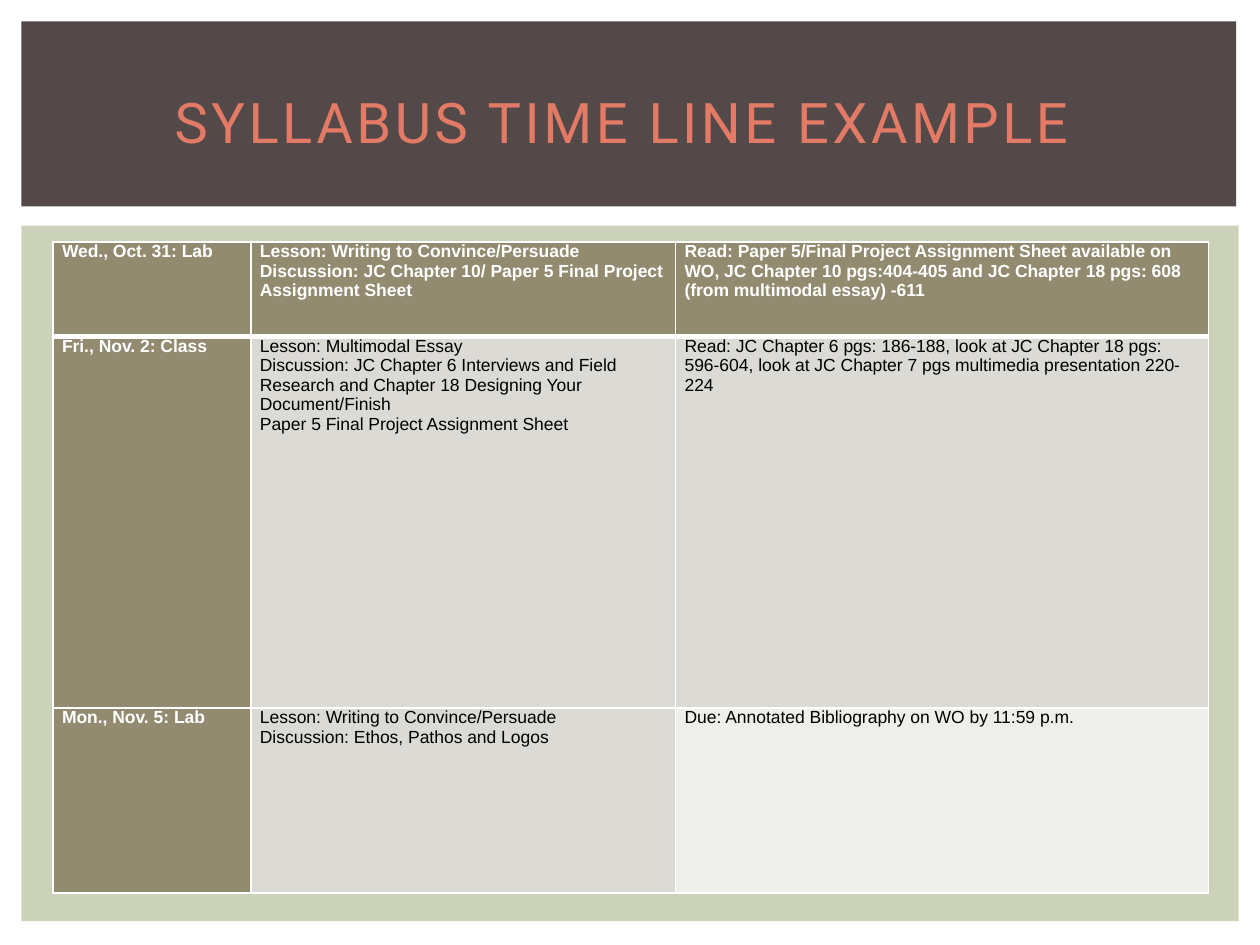
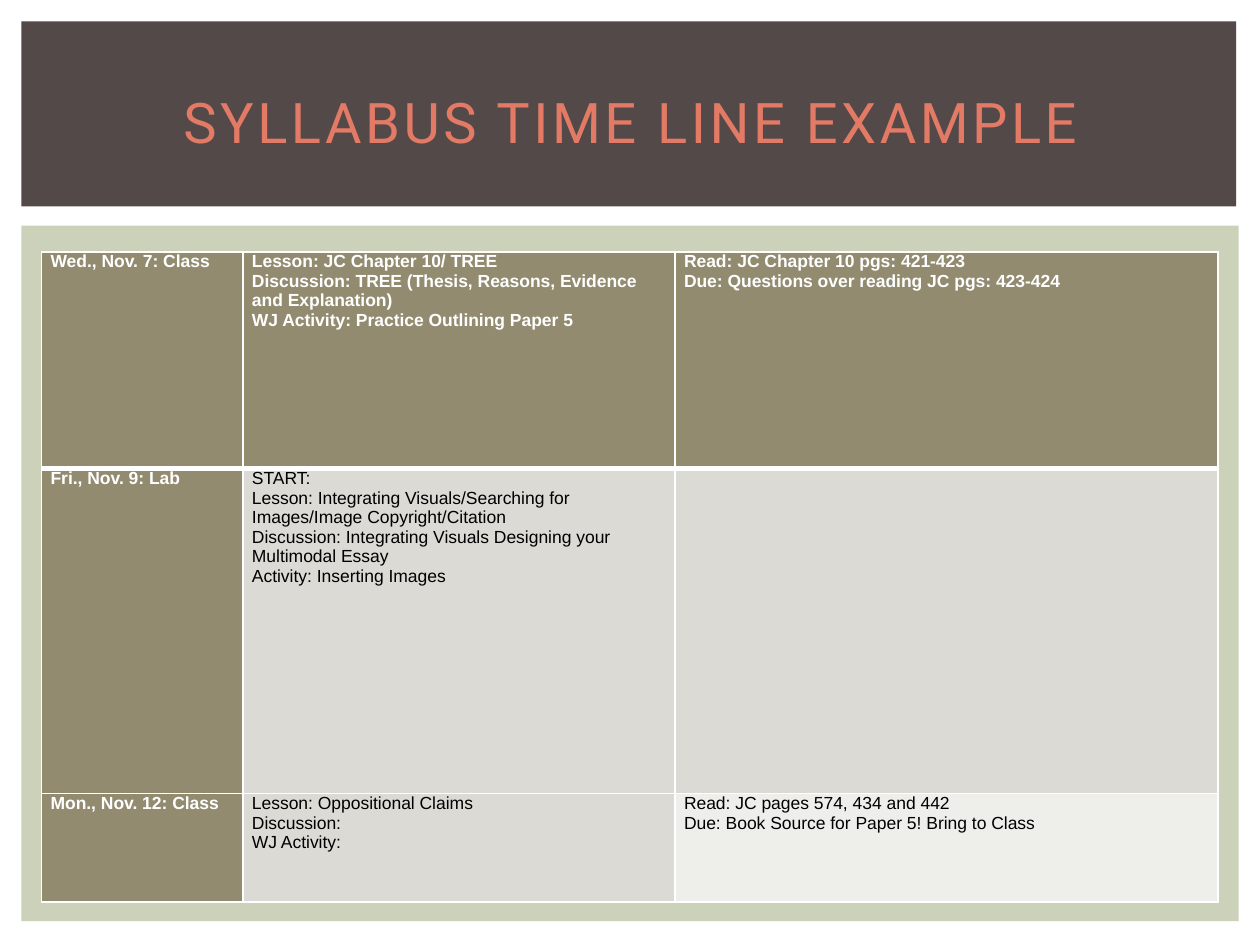
from dataclasses import dataclass

from lxml.etree import SubElement
from pptx import Presentation
from pptx.dml.color import RGBColor
from pptx.enum.shapes import MSO_SHAPE
from pptx.enum.text import MSO_ANCHOR, PP_ALIGN
from pptx.oxml.ns import qn
from pptx.util import Cm, Pt


@dataclass(frozen=True)
class Theme:
    band: str = "534949"
    panel: str = "CCD1B9"
    title: str = "E37A65"
    header: str = "928B70"
    body: str = "DCDAD5"
    light: str = "EEEEEB"
    white: str = "FFFFFF"
    black: str = "000000"
    title_font: str = "Roboto"
    table_font: str = "Arial"
    title_size: int = 32
    table_size: int = 10
    title_spacing: int = 2
    rule: int = 1
    header_rule: int = 3


THEME = Theme()
BAND_BOX = (0.43, 0.43, 24.49, 3.73)
PANEL_BOX = (0.43, 4.55, 24.54, 14.02)

SLIDES = [
    {
        "title": "SYLLABUS TIME LINE EXAMPLE ",
        "origin": (1.07, 4.88),
        "cols": (3.99, 8.56, 10.74),
        "heights": (1.9, 7.49, 3.73),
        "rows": [
            (["Wed., Oct. 31: Lab"],
             ["Lesson: Writing to Convince/Persuade",
              "Discussion: JC Chapter 10/ Paper 5 Final Project Assignment Sheet"],
             ["Read: Paper 5/Final Project Assignment Sheet available on WO, "
              "JC Chapter 10 pgs:404-405 and JC Chapter 18 pgs: 608 "
              "(from multimodal essay) -611"]),
            (["Fri., Nov. 2: Class"],
             ["Lesson: Multimodal Essay",
              "Discussion: JC Chapter 6 Interviews and Field Research and "
              "Chapter 18 Designing Your Document/Finish",
              "Paper 5 Final Project Assignment Sheet"],
             ["Read: JC Chapter 6 pgs: 186-188, look at JC Chapter 18 pgs: 596-604, "
              "look at JC Chapter 7 pgs multimedia presentation 220-224"]),
            (["Mon., Nov. 5: Lab"],
             ["Lesson: Writing to Convince/Persuade",
              "Discussion: Ethos, Pathos and Logos"],
             ["Due: Annotated Bibliography on WO by 11:59 p.m."]),
        ],
    },
    {
        "title": "SYLLABUS TIME LINE EXAMPLE",
        "origin": (0.84, 5.08),
        "cols": (4.06, 8.71, 10.95),
        "heights": (4.37, 6.55, 2.18),
        "rows": [
            (["Wed., Nov. 7: Class"],
             ["Lesson: JC Chapter 10/ TREE",
              "Discussion: TREE (Thesis, Reasons, Evidence and Explanation)",
              "WJ Activity: Practice Outlining Paper 5"],
             ["Read: JC Chapter 10 pgs: 421-423",
              "Due: Questions over reading JC pgs: 423-424"]),
            (["Fri., Nov. 9: Lab"],
             ["START:",
              "Lesson: Integrating Visuals/Searching for Images/Image Copyright/Citation",
              "Discussion: Integrating Visuals Designing your Multimodal Essay",
              "Activity: Inserting Images"],
             []),
            (["Mon., Nov. 12: Class"],
             ["Lesson: Oppositional Claims", "Discussion:", "WJ Activity:"],
             ["Read: JC pages 574, 434 and 442",
              "Due: Book Source for Paper 5! Bring to Class"]),
        ],
    },
]


def rgb(color):
    return RGBColor.from_string(color)


def style_font(font, name, size, color, bold=False):
    font.name = name
    font.size = Pt(size)
    font.bold = bold
    font.color.rgb = rgb(color)


def add_block(s, box, color):
    sp = s.shapes.add_shape(MSO_SHAPE.RECTANGLE, *map(Cm, box))
    sp.shadow.inherit = False
    sp.fill.solid()
    sp.fill.fore_color.rgb = rgb(color)
    sp.line.fill.background()


def add_title_band(s, box, title):
    left, top, width, height = box
    add_block(s, box, THEME.band)
    sp = s.shapes.add_textbox(Cm(left + 0.64), Cm(top + 0.56),
                              Cm(width - 1.2), Cm(height - 0.81))
    tf = sp.text_frame
    tf.word_wrap = True
    tf.vertical_anchor = MSO_ANCHOR.MIDDLE
    p = tf.paragraphs[0]
    p.text = title
    p.alignment = PP_ALIGN.CENTER
    r = p.runs[0]
    style_font(r.font, THEME.title_font, THEME.title_size, THEME.title)
    r.font._element.set("spc", str(THEME.title_spacing * 100))


def set_borders(cell, widths):
    tc_pr = cell._tc.get_or_add_tcPr()
    for side, width in widths.items():
        ln = SubElement(tc_pr, qn(f"a:ln{side}"), w=str(Pt(width)))
        fill = SubElement(ln, qn("a:solidFill"))
        SubElement(fill, qn("a:srgbClr"), val=THEME.white)


def fill_cell(cell, lines, row, col):
    heading = row == 0 or col == 0
    set_borders(cell, {
        "L": THEME.rule,
        "R": THEME.rule,
        "T": THEME.header_rule if row == 1 else THEME.rule,
        "B": THEME.header_rule if row == 0 else THEME.rule,
    })
    cell.fill.solid()
    color = THEME.header if heading else THEME.light if (row, col) == (2, 2) else THEME.body
    cell.fill.fore_color.rgb = rgb(color)
    cell.margin_left = cell.margin_right = Cm(0.18)
    cell.margin_top = cell.margin_bottom = 0
    tf = cell.text_frame
    tf.text = "\n".join(lines)
    for p in tf.paragraphs:
        for r in p.runs:
            style_font(r.font, THEME.table_font, THEME.table_size,
                       THEME.white if heading else THEME.black, heading)


def add_schedule(s, origin, cols, heights, rows):
    box = (*origin, sum(cols), sum(heights))
    table = s.shapes.add_table(len(rows), len(cols), *map(Cm, box)).table
    table.horz_banding = False
    for column, width in zip(table.columns, cols):
        column.width = Cm(width)
    for row, height in zip(table.rows, heights):
        row.height = Cm(height)
    for i, row in enumerate(rows):
        for j, lines in enumerate(row):
            fill_cell(table.cell(i, j), lines, i, j)


def add_syllabus_slide(prs, title, **schedule):
    s = prs.slides.add_slide(prs.slide_layouts[6])
    add_block(s, PANEL_BOX, THEME.panel)
    add_title_band(s, BAND_BOX, title)
    add_schedule(s, **schedule)


def main():
    prs = Presentation()
    prs.slide_width, prs.slide_height = Cm(25.4), Cm(19.05)
    for slide in SLIDES:
        add_syllabus_slide(prs, **slide)
    prs.save("out.pptx")


if __name__ == "__main__":
    main()
